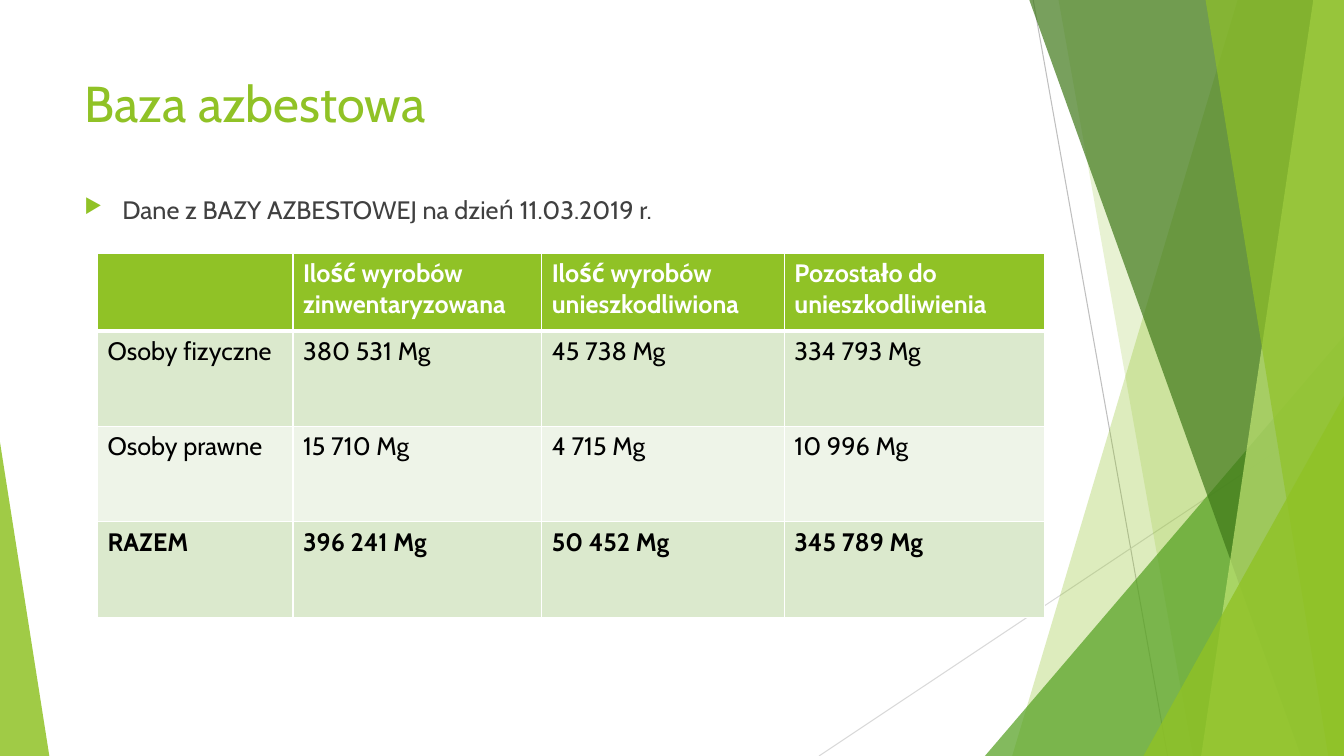
from dataclasses import dataclass

from lxml import etree
from pptx import Presentation, util as u
from pptx.dml.color import RGBColor
from pptx.enum import shapes, text
from pptx.oxml import ns

SCALE = 9525


@dataclass(frozen=True)
class Theme:
    font: str = "Cabin"
    lime: str = "90C226"
    green: str = "54A021"
    dark: str = "3F7819"
    pale: str = "C0E474"
    band: str = "DBE9CD"
    light: str = "EEF4E8"
    white: str = "FFFFFF"
    black: str = "000000"
    grey: str = "404040"
    title: int = 36
    body: int = 18


@dataclass(frozen=True)
class Ray:
    start: tuple[int, int]
    end: tuple[int, int]
    color: str


@dataclass(frozen=True)
class Shard:
    top: int
    base: int
    color: str
    alpha: int


@dataclass(frozen=True)
class Wedge:
    box: tuple[int, int, int, int]
    lean: int
    color: str
    alpha: int


@dataclass(frozen=True)
class Row:
    cells: tuple[str, ...]
    height: int
    fill: str
    ink: str
    bold: bool
    above: int = 1
    below: int = 1


T = Theme()
WIDTH, HEIGHT = 1280, 720
RAYS = (
    Ray((984, 0), (1112, 720), "BFBFBF"),
    Ray((1280, 387), (780, 720), "D9D9D9"),
)
PANES = (
    Shard(1179, 964, T.lime, 30),
    Shard(1008, 1136, T.lime, 20),
    Wedge((938, 320, 342, 400), 1, T.green, 72),
    Shard(980, 1239, T.dark, 70),
    Shard(1251, 1144, T.pale, 70),
    Shard(1148, 1265, T.lime, 65),
    Wedge((1089, 377, 191, 343), 1, T.lime, 80),
    Wedge((0, 421, 47, 299), 0, T.lime, 85),
)
COLS = (186, 237, 231, 248)
ROWS = (
    Row(("", "Ilość wyrobów zinwentaryzowana", "Ilość wyrobów unieszkodliwiona",
         "Pozostało do unieszkodliwienia"), 74, T.lime, T.white, True, below=3),
    Row(("Osoby fizyczne", "380 531 Mg", "45 738 Mg", "334 793 Mg"),
        91, T.band, T.black, False, above=3),
    Row(("Osoby prawne", "15 710 Mg", "4 715 Mg", "10 996 Mg"),
        91, T.light, T.black, False),
    Row(("RAZEM", "396 241 Mg", "50 452 Mg", "345 789 Mg"),
        91, T.band, T.black, True),
)


def px(n: int) -> u.Emu:
    return u.Emu(n * SCALE)


def node(parent, tag: str, **attrs: str):
    return etree.SubElement(parent, ns.qn(tag), attrs)


def style(par, size: int, color: str, bold: bool = False) -> None:
    par.font.name = T.font
    par.font.size = u.Pt(size)
    par.font.color.rgb = RGBColor.from_string(color)
    par.font.bold = bold


def paint(shape, color: str, alpha: int) -> None:
    shape.shadow.inherit = False
    shape.line.fill.background()
    shape.fill.solid()
    shape.fill.fore_color.rgb = RGBColor.from_string(color)
    tint = shape.fill._xPr.find(".//" + ns.qn("a:srgbClr"))
    node(tint, "a:alpha", val=str(alpha * 1000))


def draw_ray(slide, ray: Ray) -> None:
    line = slide.shapes.add_connector(
        shapes.MSO_CONNECTOR.STRAIGHT, *map(px, ray.start + ray.end))
    line.line.color.rgb = RGBColor.from_string(ray.color)
    line.line.width = u.Pt(0.75)
    node(line._element.spPr, "a:effectLst")


def draw_pane(slide, pane: Shard | Wedge) -> None:
    if isinstance(pane, Shard):
        form = slide.shapes.build_freeform(pane.top, -1, scale=SCALE)
        form.add_line_segments(
            [(WIDTH, -1), (WIDTH, HEIGHT), (pane.base, HEIGHT)], close=True)
        shape = form.convert_to_shape()
    else:
        shape = slide.shapes.add_shape(
            shapes.MSO_SHAPE.ISOSCELES_TRIANGLE, *map(px, pane.box))
        shape.adjustments[0] = pane.lean
    paint(shape, pane.color, pane.alpha)


def add_text(slide, box: tuple[int, int, int, int], words: str,
             size: int, color: str):
    frame = slide.shapes.add_textbox(*map(px, box)).text_frame
    frame.word_wrap = True
    frame.vertical_anchor = text.MSO_ANCHOR.TOP
    par = frame.paragraphs[0]
    par.text = words
    style(par, size, color)
    return par


def add_mark(par) -> None:
    par.space_before = u.Pt(10)
    props = par._p.get_or_add_pPr()
    props.set("marL", str(px(36)))
    props.set("indent", str(px(-36)))
    marks = [etree.Element(ns.qn(tag)) for tag in ("a:buClr", "a:buSzPct", "a:buChar")]
    node(marks[0], "a:srgbClr", val=T.lime)
    marks[1].set("val", "80000")
    marks[2].set("char", "▶")
    spot = props.index(props.find(ns.qn("a:spcBef"))) + 1
    props[spot:spot] = marks


def add_edges(cell, row: Row) -> None:
    props = cell._tc.get_or_add_tcPr()
    edges = (("L", 1), ("R", 1), ("T", row.above), ("B", row.below))
    for side, width in edges:
        line = node(props, f"a:ln{side}", w=str(u.Pt(width)))
        node(node(line, "a:solidFill"), "a:srgbClr", val=T.white)


def add_grid(slide) -> None:
    high = sum(row.height for row in ROWS)
    grid = slide.shapes.add_table(
        len(ROWS), len(COLS), px(93), px(241), px(sum(COLS)), px(high)).table
    grid.first_row = grid.horz_banding = False
    for col, width in zip(grid.columns, COLS):
        col.width = px(width)
    for line, row in zip(grid.rows, ROWS):
        line.height = px(row.height)
        for cell, words in zip(line.cells, row.cells):
            add_edges(cell, row)
            cell.fill.solid()
            cell.fill.fore_color.rgb = RGBColor.from_string(row.fill)
            cell.text = words
            style(cell.text_frame.paragraphs[0], T.body, row.ink, row.bold)


def main() -> None:
    deck = Presentation()
    deck.slide_width, deck.slide_height = px(WIDTH), px(HEIGHT)
    slide = deck.slides.add_slide(deck.slide_layouts[6])
    for ray in RAYS:
        draw_ray(slide, ray)
    for pane in PANES:
        draw_pane(slide, pane)
    add_text(slide, (71, 64, 902, 94), "Baza azbestowa", T.title, T.lime)
    add_mark(add_text(slide, (71, 180, 931, 361),
                      "Dane z BAZY AZBESTOWEJ na dzień 11.03.2019 r.", T.body, T.grey))
    add_grid(slide)
    deck.save("out.pptx")


if __name__ == "__main__":
    main()
